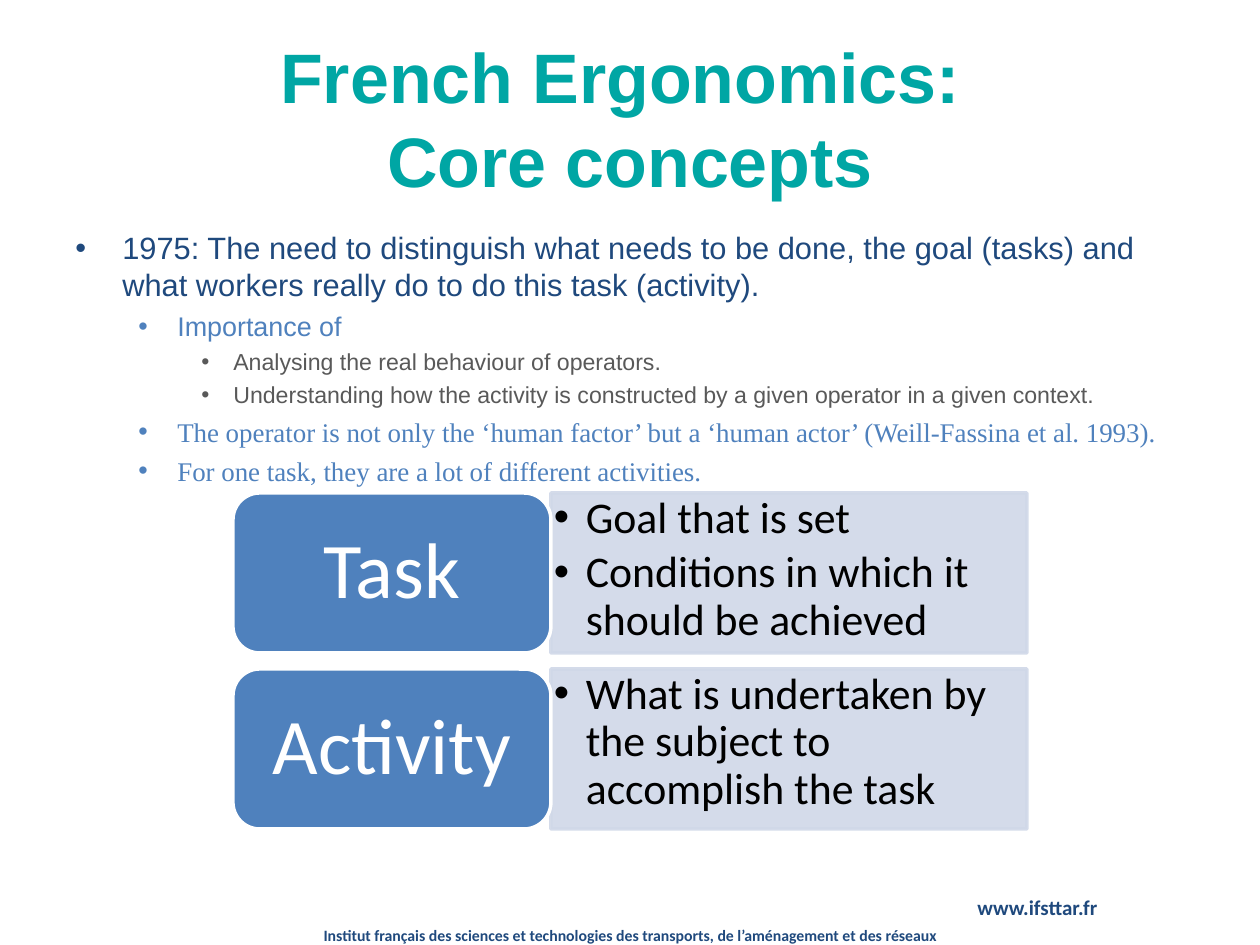
from lxml.etree import SubElement
from pptx import Presentation
from pptx.dml.color import RGBColor
from pptx.enum.shapes import MSO_SHAPE as Preset
from pptx.enum.text import MSO_ANCHOR as Anchor, PP_ALIGN as Align
from pptx.oxml.ns import qn
from pptx.util import Pt

PX = 914400 / 126
TEAL = RGBColor(0x00, 0xA6, 0xA4)
NAVY = RGBColor(0x1F, 0x49, 0x7D)
BLUE = RGBColor(0x4F, 0x81, 0xBD)
GREY = RGBColor(0x59, 0x59, 0x59)
PALE = RGBColor(0xD0, 0xD8, 0xE8)
BLACK = RGBColor(0x00, 0x00, 0x00)
WHITE = RGBColor(0xFF, 0xFF, 0xFF)

TITLE = {"name": "Arial", "size": Pt(40), "bold": True, "color": TEAL}
FOOTER = {"name": "Calibri", "size": Pt(9), "bold": True, "color": NAVY}
ADDRESS = FOOTER | {"size": Pt(12)}
POINT = {"name": "Arial", "size": Pt(17.6), "color": NAVY}
SUBPOINT = {"name": "Arial", "size": Pt(15.4), "color": BLUE}
DETAIL = {"name": "Arial", "size": Pt(13.2), "color": GREY}
REMARK = SUBPOINT | {"name": "Times New Roman"}
CONCEPT = {"name": "Calibri", "size": Pt(45), "color": WHITE}
MEANING = {"name": "Calibri", "size": Pt(25), "color": BLACK}

LEVELS = [
    {"indent": (47, 47), "before": 0},
    {"indent": (102, 39), "before": 4},
    {"indent": (158, 32), "before": 3},
]
POINTS = [
    (0, POINT, "1975: The need to distinguish what needs to be done, the goal (tasks) "
               "and what workers really do to do this task (activity)."),
    (1, SUBPOINT, "Importance of"),
    (2, DETAIL, "Analysing the real behaviour of operators."),
    (2, DETAIL, "Understanding how the activity is constructed by a given operator "
                "in a given context."),
    (1, REMARK, "The operator is not only the ‘human factor’ but a ‘human actor’ "
                "(Weill-Fassina et al. 1993)."),
    (1, REMARK, "For one task, they are a lot of different activities."),
]
CONCEPTS = [
    ("Task", ["Goal that is set", "Conditions in which it should be achieved"]),
    ("Activity", ["What is undertaken by the subject to accomplish the task"]),
]


def px(length):
    """Turn pixels into EMU."""
    return round(length * PX)


def set_margins(frame, left, top):
    """Give a text frame equal side margins and equal top and bottom margins."""
    frame.margin_left = frame.margin_right = px(left)
    frame.margin_top = frame.margin_bottom = px(top)


def add_bullet(paragraph, left, hanging):
    """Give a paragraph a round bullet with a hanging indent."""
    properties = paragraph._p.get_or_add_pPr()
    properties.set("marL", str(px(left)))
    properties.set("indent", str(-px(hanging)))
    SubElement(properties, qn("a:buFont")).set("typeface", "Arial")
    SubElement(properties, qn("a:buChar")).set("char", "•")


def write(paragraph, text, style, **layout):
    """Fill a paragraph and apply its font and layout values."""
    paragraph.text = text
    for name, value in layout.items():
        setattr(paragraph, name, value)
    for name, value in style.items():
        if name == "color":
            paragraph.font.color.rgb = value
        else:
            setattr(paragraph.font, name, value)


def next_paragraph(frame, index):
    """Return the first paragraph of a frame, or a new one after it."""
    return frame.add_paragraph() if index else frame.paragraphs[0]


def add_text(slide, box, wrap=True):
    """Add a text box and return its frame."""
    frame = slide.shapes.add_textbox(*map(px, box)).text_frame
    frame.word_wrap = wrap
    return frame


def add_panel(slide, preset, box, fill, line, opacity=100):
    """Add a filled preset shape and return its frame."""
    shape = slide.shapes.add_shape(preset, *map(px, box))
    shape.shadow.inherit = False
    shape.line.width = Pt(2)
    for part, color in ((shape.fill, fill), (shape.line.fill, line)):
        part.solid()
        part.fore_color.rgb = color
    if opacity < 100:
        for color in shape._element.spPr.iter(qn("a:srgbClr")):
            SubElement(color, qn("a:alpha")).set("val", str(opacity * 1000))
    shape.text_frame.word_wrap = True
    return shape.text_frame


def add_points(slide):
    """Add the bulleted outline."""
    frame = add_text(slide, (63, 220, 1134, 262))
    frame.margin_top = px(9)
    for index, (level, style, text) in enumerate(POINTS):
        paragraph = next_paragraph(frame, index)
        add_bullet(paragraph, *LEVELS[level]["indent"])
        write(paragraph, text, style, level=level, space_before=Pt(LEVELS[level]["before"]))


def add_concept(slide, top, name, meanings):
    """Add a concept block with its meanings beside it."""
    frame = add_panel(slide, Preset.RECTANGLE, (551, top, 476, 160), PALE, PALE, 90)
    frame.vertical_anchor = Anchor.TOP
    set_margins(frame, 3, 3)
    for index, meaning in enumerate(meanings):
        paragraph = next_paragraph(frame, index)
        add_bullet(paragraph, 32, 32)
        write(paragraph, meaning, MEANING, alignment=Align.LEFT,
              line_spacing=0.9, space_after=Pt(4))
    frame = add_panel(slide, Preset.ROUNDED_RECTANGLE, (233, top, 318, 160), BLUE, WHITE)
    frame.vertical_anchor = Anchor.MIDDLE
    set_margins(frame, 24, 12)
    write(frame.paragraphs[0], name, CONCEPT, alignment=Align.CENTER, line_spacing=0.9)


def main():
    """Build and save the slide."""
    presentation = Presentation()
    presentation.slide_width, presentation.slide_height = px(1260), px(945)
    slide = presentation.slides.add_slide(presentation.slide_layouts[6])
    footer = add_text(slide, (0, 920, 1260, 32))
    write(footer.paragraphs[0], "Institut français des sciences et technologies des transports, "
          "de l’aménagement et des réseaux", FOOTER, alignment=Align.CENTER)
    address = add_text(slide, (965, 888, 149, 38), wrap=False)
    write(address.paragraphs[0], "www.ifsttar.fr", ADDRESS)
    title = add_text(slide, (63, 38, 1134, 158))
    title.vertical_anchor = Anchor.MIDDLE
    write(title.paragraphs[0], "French Ergonomics: \vCore concepts", TITLE,
          alignment=Align.CENTER)
    add_points(slide)
    for row, (name, meanings) in enumerate(CONCEPTS):
        add_concept(slide, 493 + 176 * row, name, meanings)
    presentation.save("out.pptx")


if __name__ == "__main__":
    main()
